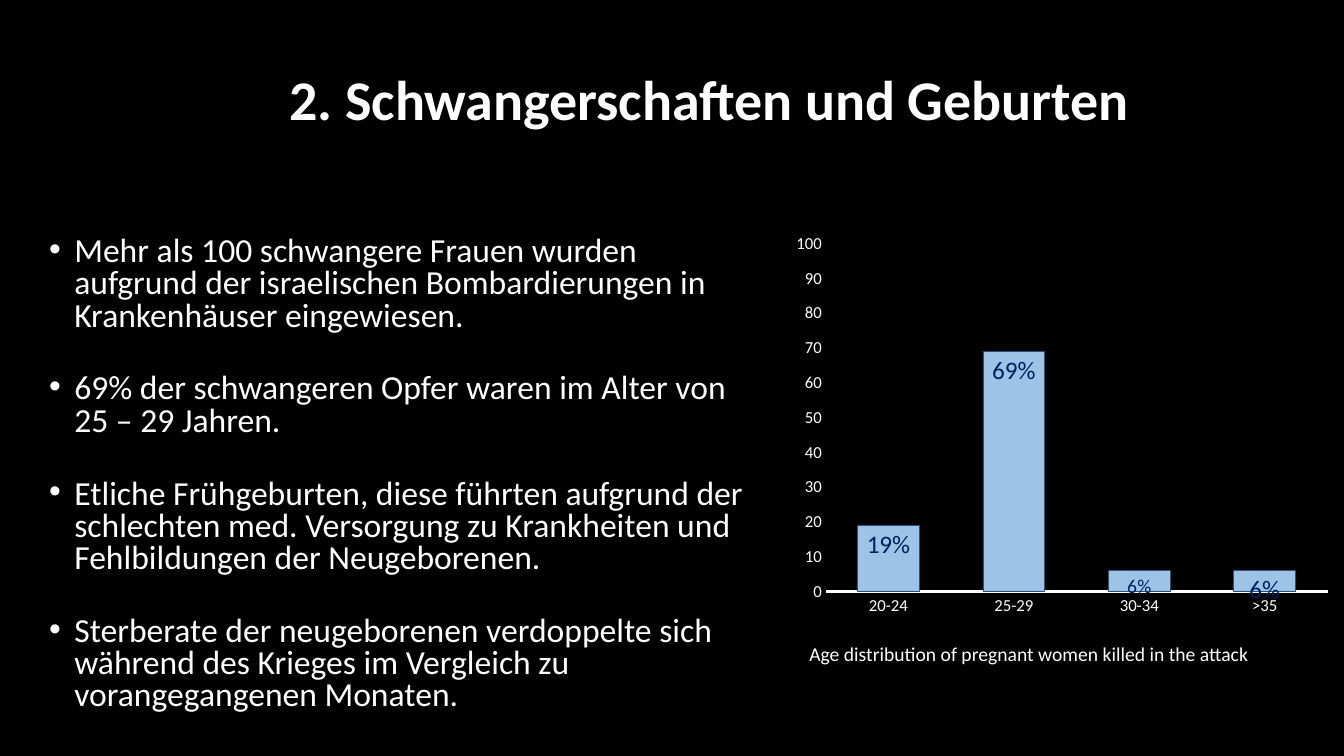
import dataclasses

import lxml.etree
import pptx
import pptx.chart.axis
import pptx.chart.chart
import pptx.chart.data
import pptx.dml.color
import pptx.enum.chart
import pptx.enum.text
import pptx.oxml
import pptx.oxml.ns
import pptx.slide
import pptx.text.text
import pptx.util

Pt = pptx.util.Pt
qn = pptx.oxml.ns.qn

FONT = "Calibri"
BLACK = pptx.dml.color.RGBColor(0x00, 0x00, 0x00)
WHITE = pptx.dml.color.RGBColor(0xFF, 0xFF, 0xFF)
NAVY = pptx.dml.color.RGBColor(0x00, 0x20, 0x60)
BAR_FILL = pptx.dml.color.RGBColor(0x9D, 0xC3, 0xE6)
BAR_LINE = pptx.dml.color.RGBColor(0x29, 0x51, 0x7B)


@dataclasses.dataclass(frozen=True)
class Area:
    left: float
    top: float
    width: float
    height: float

    def lengths(self) -> tuple[pptx.util.Length, ...]:
        return Pt(self.left), Pt(self.top), Pt(self.width), Pt(self.height)


@dataclasses.dataclass(frozen=True)
class AgeGroup:
    name: str
    percent: int
    label_size: int = 18


TITLE_AREA = Area(199.5, 18, 734, 110)
BULLET_AREA = Area(28, 165.6, 512.6, 352)
CHART_AREA = Area(550, 159, 399, 299.5)
CAPTION_AREA = Area(571, 455, 374.4, 24.5)

BULLETS = [
    "Mehr als 100 schwangere Frauen wurden aufgrund der israelischen "
    "Bombardierungen in Krankenhäuser eingewiesen.",
    "69% der schwangeren Opfer waren im Alter von 25 – 29 Jahren.",
    "Etliche Frühgeburten, diese führten aufgrund der schlechten med. "
    "Versorgung zu Krankheiten und Fehlbildungen der Neugeborenen.",
    "Sterberate der neugeborenen verdoppelte sich während des Krieges "
    "im Vergleich zu vorangegangenen Monaten.",
]
AGE_GROUPS = [
    AgeGroup("20-24", 19),
    AgeGroup("25-29", 69),
    AgeGroup("30-34", 6, label_size=14),
    AgeGroup(">35", 6),
]
PLOT_LAYOUT = {"x": 0.1, "y": 0.05, "w": 0.9, "h": 0.83}


def style_font(font: pptx.text.text.Font, size: float,
               color: pptx.dml.color.RGBColor = WHITE, bold: bool = False) -> None:
    font.name = FONT
    font.size = Pt(size)
    font.bold = bold
    font.color.rgb = color


def add_span(para, text: str, size: float,
             color: pptx.dml.color.RGBColor = WHITE, bold: bool = False) -> None:
    span = para.add_run()
    span.text = text
    style_font(span.font, size, color, bold)


def add_title(page: pptx.slide.Slide) -> None:
    title = page.shapes.title
    title.left, title.top, title.width, title.height = TITLE_AREA.lengths()
    frame = title.text_frame
    frame.vertical_anchor = pptx.enum.text.MSO_ANCHOR.MIDDLE
    frame.auto_size = pptx.enum.text.MSO_AUTO_SIZE.NONE
    para = frame.paragraphs[0]
    para.alignment = pptx.enum.text.PP_ALIGN.LEFT
    para.line_spacing = 0.9
    add_span(para, "2. Schwangerschaften und Geburten", 40, bold=True)


def add_bullets(page: pptx.slide.Slide) -> None:
    frame = page.shapes.add_textbox(*BULLET_AREA.lengths()).text_frame
    frame.word_wrap = True
    for index, text in enumerate(BULLETS):
        para = frame.add_paragraph() if index else frame.paragraphs[0]
        para.line_spacing = 0.8
        para.space_before = Pt(29 if index else 0)
        properties = para._p.get_or_add_pPr()
        properties.set("marL", str(Pt(18)))
        properties.set("indent", str(Pt(-18)))
        lxml.etree.SubElement(properties, qn("a:buFont"), typeface="Arial")
        lxml.etree.SubElement(properties, qn("a:buChar"), char="•")
        add_span(para, text, 24)


def style_axis(axis: pptx.chart.axis._BaseAxis) -> None:
    axis.has_major_gridlines = False
    axis.major_tick_mark = pptx.enum.chart.XL_TICK_MARK.NONE
    axis.minor_tick_mark = pptx.enum.chart.XL_TICK_MARK.NONE
    style_font(axis.tick_labels.font, 12)


def place_plot(chart: pptx.chart.chart.Chart) -> None:
    plot_area = chart._chartSpace.chart.plotArea
    for old_layout in plot_area.findall(qn("c:layout")):
        plot_area.remove(old_layout)
    layout = lxml.etree.Element(qn("c:layout"))
    manual = lxml.etree.SubElement(layout, qn("c:manualLayout"))
    settings = {"layoutTarget": "inner", "xMode": "edge", "yMode": "edge", **PLOT_LAYOUT}
    for name, value in settings.items():
        lxml.etree.SubElement(manual, qn(f"c:{name}"), val=str(value))
    plot_area.insert(0, layout)


def add_age_chart(page: pptx.slide.Slide) -> None:
    data = pptx.chart.data.CategoryChartData()
    data.categories = [group.name for group in AGE_GROUPS]
    data.add_series("Series 1", [group.percent for group in AGE_GROUPS])
    chart = page.shapes.add_chart(
        pptx.enum.chart.XL_CHART_TYPE.COLUMN_CLUSTERED, *CHART_AREA.lengths(), data
    ).chart
    chart.has_legend = False
    chart.has_title = False
    style_font(chart.font, 10)
    place_plot(chart)

    # Axes
    style_axis(chart.category_axis)
    chart.category_axis.format.line.color.rgb = WHITE
    chart.category_axis.format.line.width = Pt(1.5)
    style_axis(chart.value_axis)
    chart.value_axis.format.line.fill.background()
    chart.value_axis.minimum_scale = 0
    chart.value_axis.maximum_scale = 100
    chart.value_axis.major_unit = 10

    # Columns
    plot = chart.plots[0]
    plot.vary_by_categories = False
    plot.gap_width = 103
    plot.overlap = 17
    series = plot.series[0]
    series.format.fill.solid()
    series.format.fill.fore_color.rgb = BAR_FILL
    series.format.line.color.rgb = BAR_LINE
    series.format.line.width = Pt(0.75)

    # Column labels
    inside_end = pptx.enum.chart.XL_LABEL_POSITION.INSIDE_END
    series.data_labels.show_value = True
    series.data_labels.position = inside_end
    style_font(series.data_labels.font, 18)
    for index, group in enumerate(AGE_GROUPS):
        label = series.points[index].data_label
        para = label.text_frame.paragraphs[0]
        add_span(para, f"{group.percent}%", group.label_size, NAVY)
        label.position = inside_end


def add_caption(page: pptx.slide.Slide) -> None:
    frame = page.shapes.add_textbox(*CAPTION_AREA.lengths()).text_frame
    frame.word_wrap = True
    frame.auto_size = pptx.enum.text.MSO_AUTO_SIZE.SHAPE_TO_FIT_TEXT
    add_span(frame.paragraphs[0],
             "Age distribution of pregnant women killed in the attack", 14)


def main() -> None:
    deck = pptx.Presentation()
    deck.slide_width, deck.slide_height = Pt(960), Pt(540)
    page = deck.slides.add_slide(deck.slide_layouts[5])
    page.background.fill.solid()
    page.background.fill.fore_color.rgb = BLACK
    add_title(page)
    add_bullets(page)
    add_age_chart(page)
    add_caption(page)
    deck.save("out.pptx")


if __name__ == "__main__":
    main()
